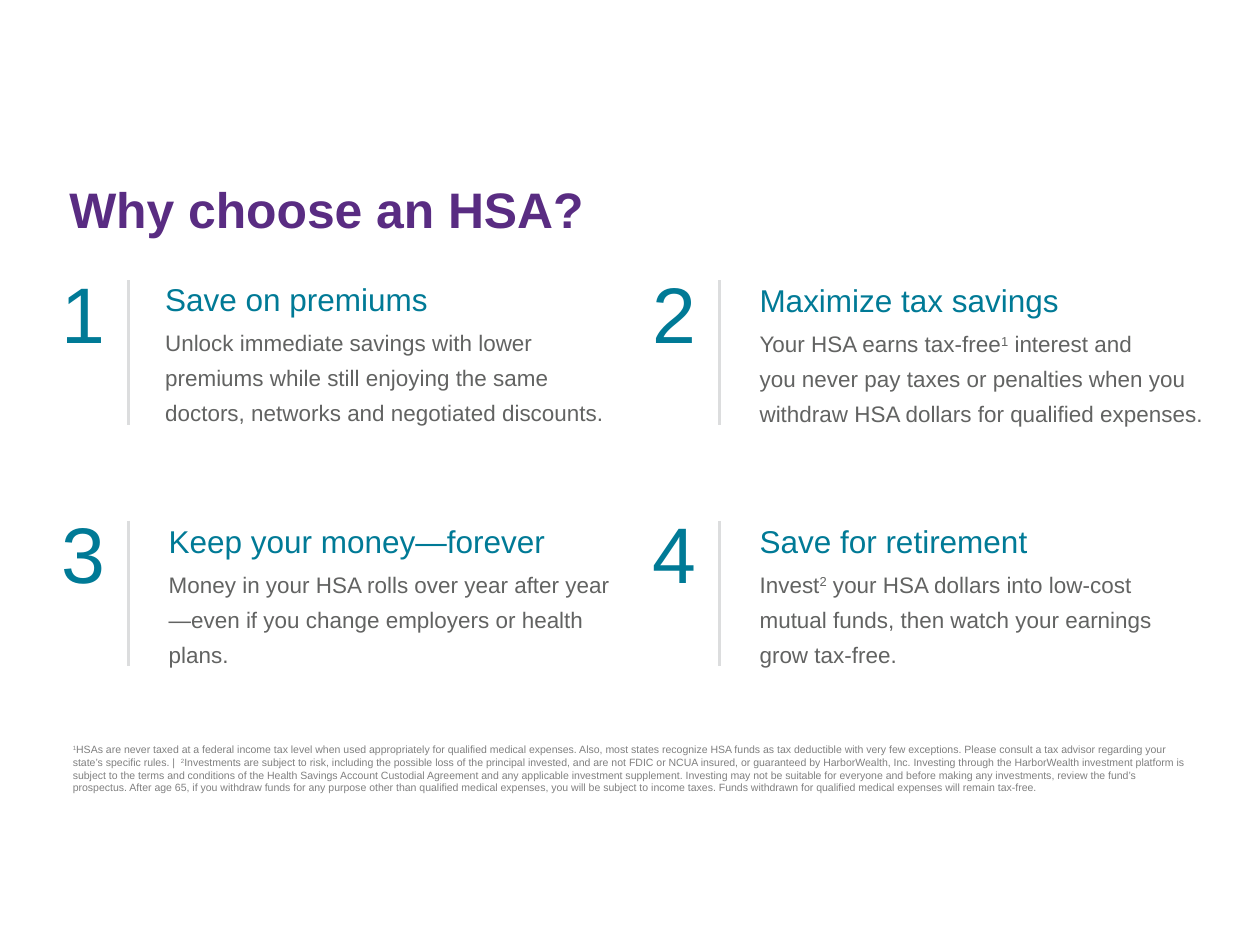
from copy import deepcopy
from dataclasses import dataclass

from lxml import etree
from pptx import Presentation
from pptx import util as u
from pptx.dml.color import RGBColor
from pptx.enum import shapes, text
from pptx.oxml.ns import qn


@dataclass(frozen=True)
class Theme:
    font: str = "Arial"
    purple: str = "592C82"
    teal: str = "007A96"
    gray: str = "626362"
    pale: str = "DCDDDE"
    note: str = "808080"
    white: str = "FFFFFF"
    title: float = 28.5
    digit: float = 45
    head: float = 18
    body: float = 12.8
    small: float = 6


THEME = Theme()
COLS, ROWS = 100, 75
WIDE, HIGH = u.Inches(10), u.Inches(7.5)
CARDS = [
    ("Save on premiums",
     "Unlock immediate savings with lower premiums while still enjoying "
     "the same doctors, networks and negotiated discounts."),
    ("Maximize tax savings",
     "Your HSA earns tax-free^1^ interest and \nyou never pay taxes or "
     "penalties when you withdraw HSA dollars for qualified expenses."),
    ("Keep your money—forever",
     "Money in your HSA rolls over year after year—even if you change "
     "employers or health plans."),
    ("Save for retirement",
     "Invest^2^ your HSA dollars into low-cost \nmutual funds, then watch "
     "your earnings \ngrow tax-free."),
]
NOTES = [
    "^1^HSAs are never taxed at a federal income tax level when used "
    "appropriately for qualified medical expenses. Also, most states "
    "recognize HSA funds as tax deductible with very few exceptions. Please "
    "consult a tax advisor regarding your state’s specific rules. |  ",
    "^2^Investments are subject to risk, including the possible loss of the "
    "principal invested, and are not FDIC or NCUA insured, or guaranteed by "
    "HarborWealth, Inc. Investing through the HarborWealth investment "
    "platform is subject to the terms and conditions of the Health Savings "
    "Account Custodial Agreement and any applicable investment supplement. ",
    "Investing may not be suitable for everyone and before making any "
    "investments, review the fund’s prospectus. After age 65, if you "
    "withdraw funds for any purpose other than qualified medical expenses, "
    "you will be subject to income taxes. Funds withdrawn for qualified "
    "medical expenses will remain tax-free.",
]


def grid(x, y, w, h):
    """Turn columns and rows into slide lengths."""
    return (int(WIDE * x / COLS), int(HIGH * y / ROWS),
            int(WIDE * w / COLS), int(HIGH * h / ROWS))


def rgb(code):
    return RGBColor.from_string(code)


def write(par, words, size, color, bold=False, line=None, after=0,
          align=text.PP_ALIGN.LEFT):
    """Fill a paragraph; ^x^ is superscript and a newline is a line break."""
    par.alignment = align
    par.line_spacing = line
    par.space_before, par.space_after = u.Pt(0), u.Pt(after)
    for i, part in enumerate(words.split("^")):
        for j, piece in enumerate(part.split("\n")):
            if j:
                par.add_line_break()
                par._p.findall(qn("a:br"))[-1].append(deepcopy(run._r.rPr))
            if not piece:
                continue
            run = par.add_run()
            run.text = piece
            font = run.font
            font.name, font.size, font.bold = THEME.font, u.Pt(size), bold
            font.color.rgb = rgb(color)
            if i % 2:
                run._r.get_or_add_rPr().set("baseline", "30000")


def frame(shape, side=0.1, top=0.05):
    box = shape.text_frame
    box.word_wrap = True
    box.auto_size = text.MSO_AUTO_SIZE.NONE
    box.vertical_anchor = text.MSO_ANCHOR.TOP
    box.margin_left = box.margin_right = u.Inches(side)
    box.margin_top = box.margin_bottom = u.Inches(top)
    return box


def header(slide, box):
    title = slide.shapes.title
    title.left, title.top, title.width, title.height = grid(*box)
    write(frame(title, top=0.1).paragraphs[0], "Why choose an HSA?",
          THEME.title, THEME.purple, bold=True, line=u.Pt(45.6))


def card(slide, box, num, head, body):
    x, y, w, h = box
    group = slide.shapes.add_group_shape().shapes

    digit = group.add_textbox(*grid(x, y, 7.3, 2.5))
    write(frame(digit).paragraphs[0], str(num), THEME.digit, THEME.teal,
          align=text.PP_ALIGN.CENTER)

    words = group.add_textbox(*grid(x + 9.4, y + 1, w - 9.4, h - 1))
    inner = frame(words, 0.07, 0.04) if num == 1 else frame(words)
    write(inner.paragraphs[0], head, THEME.head, THEME.teal, line=1.1,
          after=2.2)
    write(inner.add_paragraph(), body, THEME.body, THEME.gray, line=1.3)

    left, top, _, tall = grid(x + 7.2, y + 1.75, 0, 11.5)
    rule = group.add_connector(shapes.MSO_CONNECTOR.STRAIGHT,
                               left, top, left, top + tall)
    rule.line.color.rgb, rule.line.width = rgb(THEME.pale), u.Pt(2)
    etree.SubElement(rule._element.spPr, qn("a:effectLst"))


def cards(slide, box):
    x, y, w, h = box
    for i, (head, body) in enumerate(CARDS):
        row, col = divmod(i, 2)
        place = (x + col * w / 2, y + row * h / 2, w / 2, 13.2)
        card(slide, place, i + 1, head, body)


def footer(slide, box):
    note = slide.shapes.add_shape(shapes.MSO_SHAPE.RECTANGLE, *grid(*box))
    note.shadow.inherit = False
    note.fill.solid()
    note.fill.fore_color.rgb = rgb(THEME.white)
    note.line.fill.background()
    par = frame(note, top=0.1).paragraphs[0]
    for words in NOTES:
        write(par, words, THEME.small, THEME.note, after=1)


def main():
    deck = Presentation()
    deck.slide_width, deck.slide_height = WIDE, HIGH
    slide = deck.slides.add_slide(deck.slide_layouts[5])
    header(slide, (4.5, 11.6, 59.9, 7.8))
    cards(slide, (3, 20.5, 93.8, 38.2))
    footer(slide, (4.8, 58, 90.3, 6.1))
    deck.save("out.pptx")


if __name__ == "__main__":
    main()
